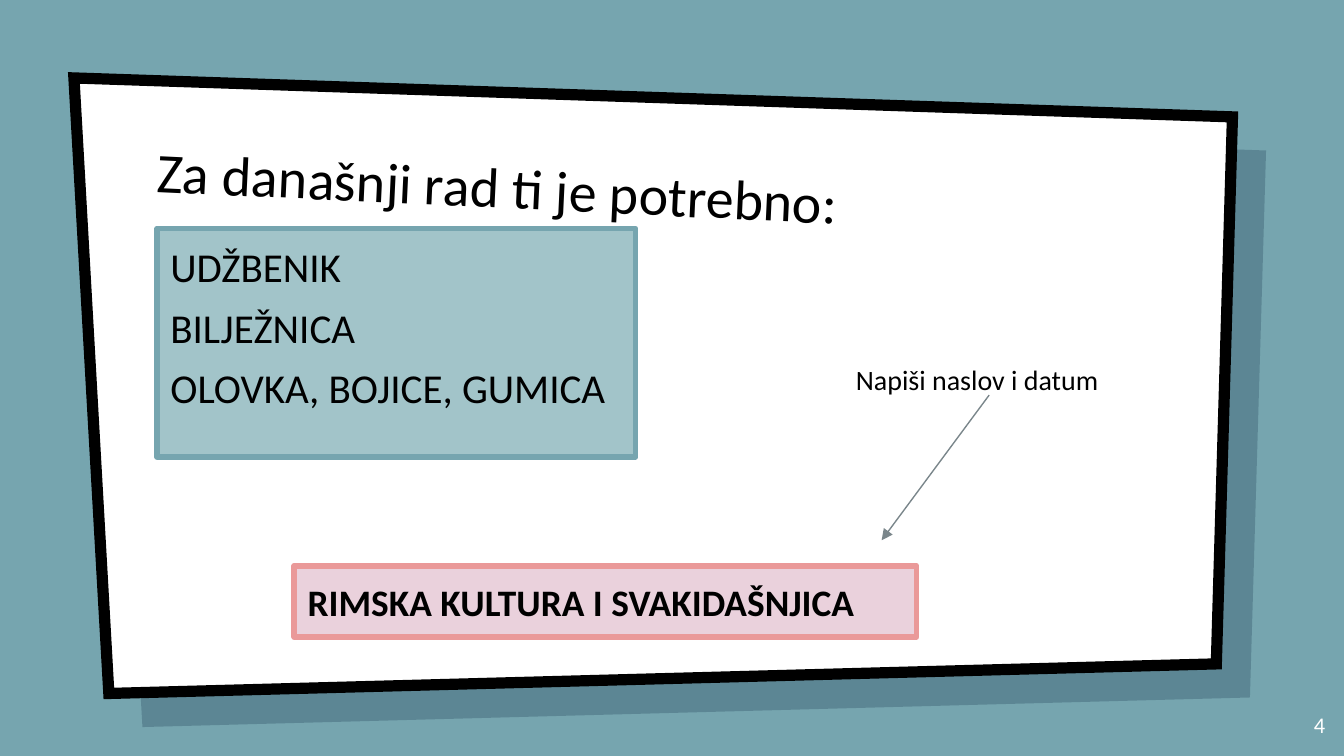
import pptx
import pptx.dml.color
import pptx.enum.shapes
import pptx.enum.text
import pptx.util
from lxml import etree
from pptx.oxml.ns import qn

Inches = pptx.util.Inches
Pt = pptx.util.Pt
RGBColor = pptx.dml.color.RGBColor
PP_ALIGN = pptx.enum.text.PP_ALIGN
MSO_ANCHOR = pptx.enum.text.MSO_ANCHOR

TEAL = RGBColor(0x76, 0xA5, 0xAF)
LIGHT_TEAL = RGBColor(0xA2, 0xC4, 0xC9)
PINK = RGBColor(0xEA, 0xD1, 0xDC)
CORAL = RGBColor(0xEA, 0x99, 0x99)
NAVY = RGBColor(0x00, 0x19, 0x36)
GREY = RGBColor(0x7A, 0x86, 0x8B)
BLACK = RGBColor(0, 0, 0)
WHITE = RGBColor(0xFF, 0xFF, 0xFF)

FONT = "Calibri"
PANEL = [(0.55, 0.58), (9.17, 0.87), (9.05, 4.94), (0.81, 5.16)]
SHADOW_OFFSET = 0.25
SHADOW_OPACITY = 22
ARROW = [(7.36, 2.94), (6.56, 4.02)]

TITLE = dict(lines=["Za današnji rad ti je potrebno:"], box=(1.07, 0.96, 7.69, 0.83),
             size=30, anchor=MSO_ANCHOR.BOTTOM, rotation=2.7)
SUPPLIES = dict(lines=["UDŽBENIK", "BILJEŽNICA", "OLOVKA, BOJICE, GUMICA"],
                box=(1.17, 1.7, 3.56, 1.7), size=22, fill=LIGHT_TEAL, border=TEAL)
PAGE_NUMBER = dict(lines=["4"], box=(9.36, 5.19, 0.6, 0.43), size=12,
                   color=WHITE, align=PP_ALIGN.RIGHT)
TOPIC = dict(lines=["RIMSKA KULTURA I SVAKIDAŠNJICA"], box=(2.19, 4.21, 4.63, 0.53),
             size=20, bold=True, fill=PINK, border=CORAL)
INSTRUCTION = dict(lines=["Napiši naslov i datum"], box=(6.27, 2.6, 2.17, 0.43), size=15)


def set_line(shape, color, width, join):
    """Give the shape an outline; join is "miter" or "round"."""
    shape.line.color.rgb = color
    shape.line.width = Pt(width)
    etree.SubElement(shape.line._get_or_add_ln(), qn(f"a:{join}"))


def add_panel(slide, fill, offset=0):
    points = [(Inches(x + offset), Inches(y + offset)) for x, y in PANEL]
    builder = slide.shapes.build_freeform(*points[0])
    builder.add_line_segments(points[1:], close=True)
    shape = builder.convert_to_shape()
    shape.shadow.inherit = False
    shape.fill.solid()
    shape.fill.fore_color.rgb = fill
    return shape


def add_text(slide, lines, box, size, color=BLACK, bold=False, align=PP_ALIGN.LEFT,
             anchor=MSO_ANCHOR.TOP, rotation=0, fill=None, border=None):
    """Add a text box, or a bordered rectangle when a fill is given."""
    place = [Inches(value) for value in box]
    if fill is None:
        shape = slide.shapes.add_textbox(*place)
    else:
        shape = slide.shapes.add_shape(pptx.enum.shapes.MSO_SHAPE.RECTANGLE, *place)
        shape.shadow.inherit = False
        shape.fill.solid()
        shape.fill.fore_color.rgb = fill
        set_line(shape, border, 3, "round")
    shape.rotation = rotation

    frame = shape.text_frame
    frame.word_wrap = True
    frame.vertical_anchor = anchor
    frame.margin_left = frame.margin_right = Inches(0.1)
    frame.margin_top = frame.margin_bottom = Inches(0.1)
    frame.text = "\n".join(lines)
    for index, paragraph in enumerate(frame.paragraphs):
        paragraph.alignment = align
        paragraph.space_before = Pt(6 if index else 0)
        paragraph.font.name = FONT
        paragraph.font.size = Pt(size)
        paragraph.font.bold = bold
        paragraph.font.color.rgb = color


def add_arrow(slide, start, end):
    connector = slide.shapes.add_connector(
        pptx.enum.shapes.MSO_CONNECTOR.STRAIGHT,
        *[Inches(value) for value in start + end])
    connector.line.color.rgb = GREY
    connector.line.width = Pt(0.75)
    etree.SubElement(connector.line._get_or_add_ln(), qn("a:tailEnd"), type="triangle")
    etree.SubElement(connector._element.spPr, qn("a:effectLst"))


def main():
    presentation = pptx.Presentation()
    presentation.slide_width = Inches(10)
    presentation.slide_height = Inches(5.625)
    slide = presentation.slides.add_slide(presentation.slide_layouts[6])
    slide.background.fill.solid()
    slide.background.fill.fore_color.rgb = TEAL

    panel_shadow = add_panel(slide, NAVY, SHADOW_OFFSET)
    panel_shadow.line.fill.background()
    shadow_color = panel_shadow._element.spPr.find(qn("a:solidFill"))[0]
    etree.SubElement(shadow_color, qn("a:alpha"), val=str(SHADOW_OPACITY * 1000))
    set_line(add_panel(slide, WHITE), BLACK, 6, "miter")

    for text in (TITLE, SUPPLIES, PAGE_NUMBER, TOPIC):
        add_text(slide, **text)
    add_arrow(slide, *ARROW)
    add_text(slide, **INSTRUCTION)
    presentation.save("out.pptx")


if __name__ == "__main__":
    main()
